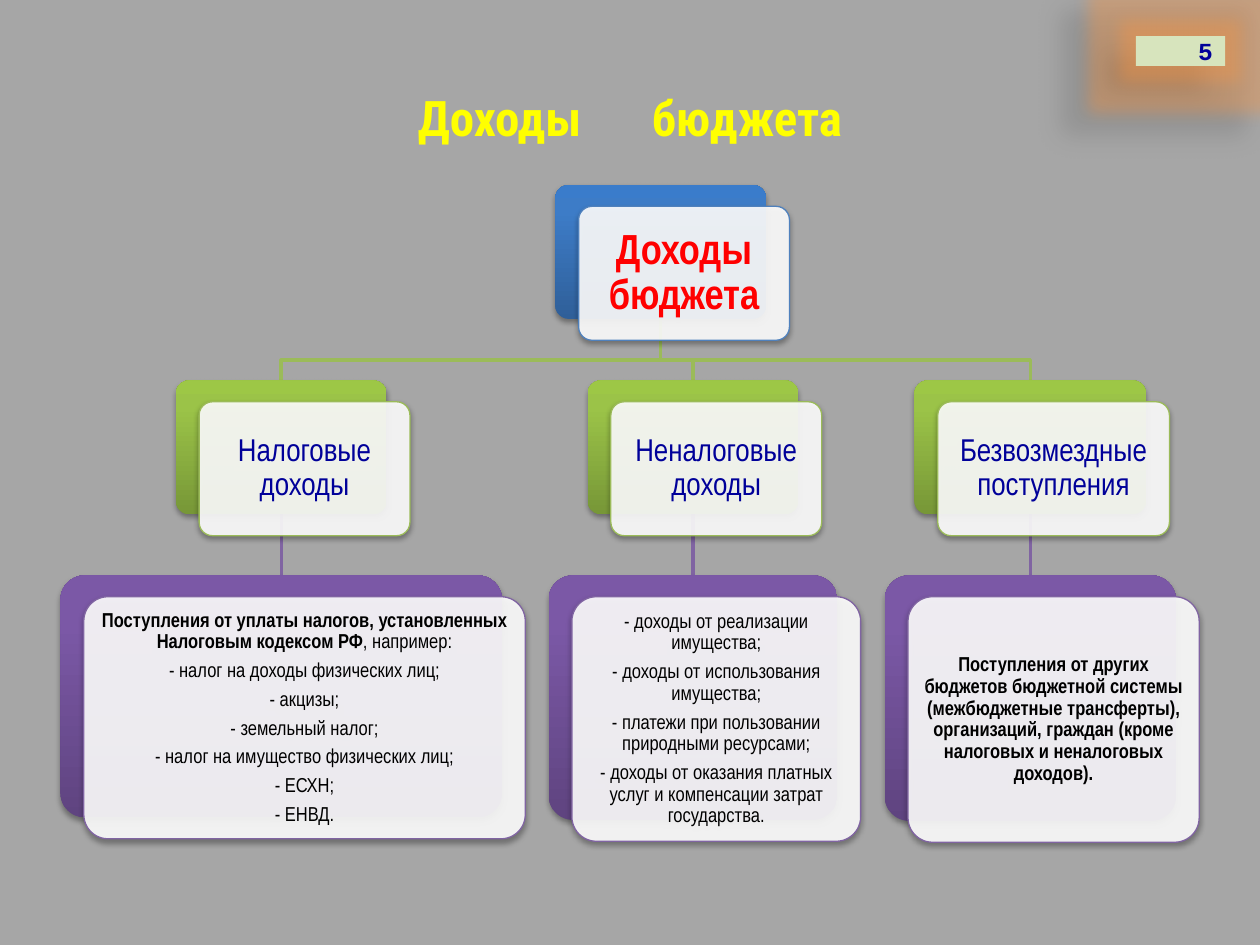
from lxml.etree import SubElement
from pptx import Presentation
from pptx.dml.color import RGBColor
from pptx.enum.shapes import MSO_CONNECTOR, MSO_SHAPE
from pptx.enum.text import MSO_ANCHOR, PP_ALIGN
from pptx.oxml.ns import qn
from pptx.util import Cm, Pt

BLUE = {"line": "4F81BD", "stops": [(0, "2F5F99"), (80, "3D7CC7"), (100, "3A7CCB")]}
GREEN = {"line": "9BBB59", "stops": [(0, "779737"), (80, "9BC348"), (100, "9DC746")]}
PURPLE = {"line": "8064A2", "stops": [(0, "5F4480"), (80, "7B58A6"), (100, "7C57A8")]}

ROOT_STYLE = {"name": "Arial Narrow", "size": 24, "color": "FF0000", "bold": True}
GROUP_STYLE = {"name": "Arial Narrow", "size": 18, "color": "000099", "bold": False}
DETAIL_STYLE = {"name": "Arial Narrow", "size": 11.5, "color": "000000", "bold": False}
DETAIL_BOLD = DETAIL_STYLE | {"bold": True}
TITLE_STYLE = {"name": "Roboto Condensed", "size": 28, "color": "FFFF00", "bold": True}
NUMBER_STYLE = {"name": "Courier New", "size": 14, "color": "000099", "bold": True}

ROOT = [[("Доходы бюджета", ROOT_STYLE)]]
BRANCHES = [
    {
        "center": 5.67, "width": 4.25, "detail_size": (8.9, 4.88),
        "group": "Налоговые доходы",
        "details": [
            [("Поступления от уплаты налогов, установленных Налоговым кодексом РФ", DETAIL_BOLD),
             (", например:", DETAIL_STYLE)],
            [("- налог на доходы физических лиц;", DETAIL_STYLE)],
            [("- акцизы;", DETAIL_STYLE)],
            [("- земельный налог;", DETAIL_STYLE)],
            [("- налог на имущество физических лиц;", DETAIL_STYLE)],
            [("- ЕСХН;", DETAIL_STYLE)],
            [("- ЕНВД.", DETAIL_STYLE)],
        ],
    },
    {
        "center": 13.97, "width": 4.25, "detail_size": (5.82, 4.93),
        "group": "Неналоговые доходы",
        "details": [
            [("- доходы от реализации имущества;", DETAIL_STYLE)],
            [("- доходы от использования имущества;", DETAIL_STYLE)],
            [("- платежи при пользовании природными ресурсами;", DETAIL_STYLE)],
            [("- доходы от оказания платных услуг и компенсации затрат государства.", DETAIL_STYLE)],
        ],
    },
    {
        "center": 20.77, "width": 4.67, "detail_size": (5.87, 4.95),
        "group": "Безвозмездные поступления",
        "details": [
            [("Поступления от других бюджетов бюджетной системы (межбюджетные трансферты), "
              "организаций, граждан (кроме налоговых и неналоговых доходов).", DETAIL_BOLD)],
        ],
    },
]

ROOT_CENTER, ROOT_TOP, ROOT_WIDTH = 13.32, 3.73, 4.25
GROUP_TOP, DETAIL_TOP, NODE_HEIGHT = 7.67, 11.6, 2.7
BUS_TOP = 7.26
SHIFT_X, SHIFT_Y = 0.47, 0.43
CARD_SHADOW = {"alpha": 35, "blur": 3.15, "distance": 1.8, "angle": 90}
NUMBER_SHADOW = {"alpha": 28, "blur": 11.8, "distance": 19.7, "angle": 141}


def rgb(value):
    return RGBColor.from_string(value)


def add_color(parent, value, alpha=100):
    color = SubElement(parent, qn("a:srgbClr"), val=value)
    if alpha < 100:
        SubElement(color, qn("a:alpha"), val=str(alpha * 1000))


def add_effects(shape, shadow, glow=None):
    shape.shadow.inherit = False
    effects = shape._element.spPr.find(qn("a:effectLst"))
    if glow:
        color, radius = glow
        add_color(SubElement(effects, qn("a:glow"), rad=str(Pt(radius))), color, 40)
    outer = SubElement(effects, qn("a:outerShdw"), blurRad=str(Pt(shadow["blur"])),
                       dist=str(Pt(shadow["distance"])), dir=str(shadow["angle"] * 60000),
                       rotWithShape="0")
    add_color(outer, "000000", shadow["alpha"])


def fill_gradient(shape, stops):
    shape.fill.gradient()
    shape.fill.gradient_angle = 90
    stop_list = shape._element.spPr.find(qn("a:gradFill")).find(qn("a:gsLst"))
    for old_stop in list(stop_list):
        stop_list.remove(old_stop)
    for position, color in stops:
        add_color(SubElement(stop_list, qn("a:gs"), pos=str(position * 1000)), color)


def write(shape, paragraphs, margin, align=PP_ALIGN.CENTER, **spacing):
    frame = shape.text_frame
    settings = {"word_wrap": True, "vertical_anchor": MSO_ANCHOR.MIDDLE}
    settings |= {f"margin_{side}": Cm(margin) for side in ("left", "right", "top", "bottom")}
    for name, value in settings.items():
        setattr(frame, name, value)
    for index, spans in enumerate(paragraphs):
        para = frame.add_paragraph() if index else frame.paragraphs[0]
        for name, value in ({"alignment": align} | spacing).items():
            setattr(para, name, value)
        for text, style in spans:
            span = para.add_run()
            span.text = text
            for name, value in style.items():
                if name == "color":
                    span.font.color.rgb = rgb(value)
                elif name == "spacing":
                    span.font._element.set("spc", str(value * 100))
                else:
                    setattr(span.font, name, Pt(value) if name == "size" else value)


def add_card(page, center, top, width, height, theme, paragraphs, margin):
    left = center - width / 2
    back, panel = [
        page.shapes.add_shape(MSO_SHAPE.ROUNDED_RECTANGLE, Cm(left + dx), Cm(top + dy),
                              Cm(width), Cm(height))
        for dx, dy in ((0, 0), (SHIFT_X, SHIFT_Y))
    ]
    for shape in (back, panel):
        shape.adjustments[0] = 0.1
        add_effects(shape, CARD_SHADOW)
    fill_gradient(back, theme["stops"])
    back.line.fill.background()
    panel.fill.solid()
    panel.fill.fore_color.rgb = rgb("FFFFFF")
    white = panel._element.spPr.find(qn("a:solidFill"))[0]
    SubElement(white, qn("a:alpha"), val="90000")
    panel.line.color.rgb = rgb(theme["line"])
    panel.line.width = Pt(0.75)
    size = paragraphs[0][0][1]["size"]
    write(panel, paragraphs, margin, line_spacing=0.9, space_after=Pt(round(size * 0.35)))


def style_link(link, color):
    link.line.color.rgb = rgb(color)
    link.line.width = Pt(2)


def add_links(page, center):
    start = ROOT_TOP + NODE_HEIGHT
    builder = page.shapes.build_freeform(Cm(ROOT_CENTER), Cm(start))
    corners = [(ROOT_CENTER, BUS_TOP), (center, BUS_TOP), (center, GROUP_TOP)]
    builder.add_line_segments([(Cm(x), Cm(y)) for x, y in corners], close=False)
    elbow = builder.convert_to_shape()
    elbow.fill.background()
    elbow.shadow.inherit = False
    style_link(elbow, GREEN["line"])
    drop = page.shapes.add_connector(MSO_CONNECTOR.STRAIGHT, Cm(center),
                                     Cm(GROUP_TOP + NODE_HEIGHT), Cm(center), Cm(DETAIL_TOP))
    style_link(drop, PURPLE["line"])
    SubElement(drop._element.spPr, qn("a:effectLst"))


def main():
    deck = Presentation()
    deck.slide_width, deck.slide_height = Cm(25.4), Cm(19.05)
    page = deck.slides.add_slide(deck.slide_layouts[6])
    page.background.fill.solid()
    page.background.fill.fore_color.rgb = rgb("A6A6A6")

    for branch in BRANCHES:
        add_links(page, branch["center"])
    add_card(page, ROOT_CENTER, ROOT_TOP, ROOT_WIDTH, NODE_HEIGHT, BLUE, ROOT, 0.25)
    for branch in BRANCHES:
        center = branch["center"]
        add_card(page, center, GROUP_TOP, branch["width"], NODE_HEIGHT, GREEN,
                 [[(branch["group"], GROUP_STYLE)]], 0.18)
        add_card(page, center, DETAIL_TOP, *branch["detail_size"], PURPLE,
                 branch["details"], 0.12)

    number = page.shapes.add_shape(MSO_SHAPE.RECTANGLE, Cm(22.9), Cm(0.73), Cm(1.8), Cm(0.6))
    number.fill.solid()
    number.fill.fore_color.rgb = rgb("D7E4BD")
    number.line.fill.background()
    add_effects(number, NUMBER_SHADOW, glow=("F79646", 18))
    write(number, [[("5", NUMBER_STYLE)]], 0.25, PP_ALIGN.RIGHT)

    title = page.shapes.add_textbox(Cm(1.27), Cm(0.95), Cm(22.86), Cm(2.8))
    write(title, [[("Доходы", TITLE_STYLE), (" ", TITLE_STYLE | {"spacing": 34}),
                   ("бюджета", TITLE_STYLE)]], 0.13)
    deck.save("out.pptx")


if __name__ == "__main__":
    main()
